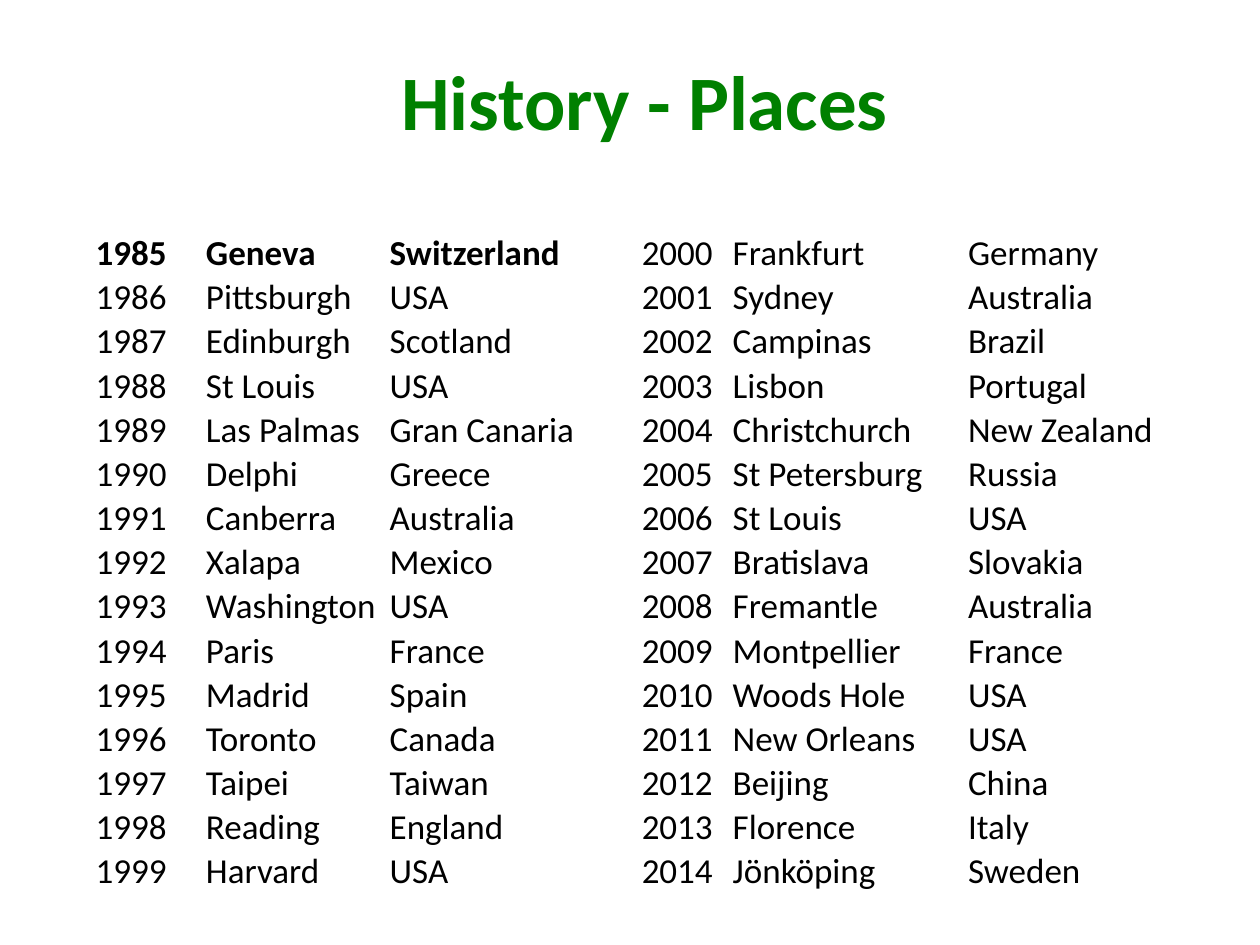
from lxml.etree import SubElement
from pptx import Presentation
from pptx.dml.color import RGBColor
from pptx.enum.text import MSO_ANCHOR as Anchor, PP_ALIGN as Align
from pptx.oxml.ns import qn
from pptx.util import Pt

GREEN = RGBColor(0x00, 0x80, 0x00)
BLACK = RGBColor(0x00, 0x00, 0x00)
WHITE = RGBColor(0xFF, 0xFF, 0xFF)

EARLY_PLACES = [
    ("1985", "Geneva", "Switzerland"),
    ("1986", "Pittsburgh", "USA"),
    ("1987", "Edinburgh", "Scotland"),
    ("1988", "St Louis", "USA"),
    ("1989", "Las Palmas", "Gran Canaria"),
    ("1990", "Delphi", "Greece"),
    ("1991", "Canberra", "Australia"),
    ("1992", "Xalapa", "Mexico"),
    ("1993", "Washington", "USA"),
    ("1994", "Paris", "France"),
    ("1995", "Madrid", "Spain"),
    ("1996", "Toronto", "Canada"),
    ("1997", "Taipei", "Taiwan"),
    ("1998", "Reading", "England"),
    ("1999", "Harvard", "USA"),
]
LATER_PLACES = [
    ("2000", "Frankfurt", "Germany"),
    ("2001", "Sydney", "Australia"),
    ("2002", "Campinas", "Brazil"),
    ("2003", "Lisbon", "Portugal"),
    ("2004", "Christchurch", "New Zealand"),
    ("2005", "St Petersburg", "Russia"),
    ("2006", "St Louis", "USA"),
    ("2007", "Bratislava", "Slovakia"),
    ("2008", "Fremantle", "Australia"),
    ("2009", "Montpellier", "France"),
    ("2010", "Woods Hole", "USA"),
    ("2011", "New Orleans", "USA"),
    ("2012", "Beijing", "China"),
    ("2013", "Florence", "Italy"),
    ("2014", "Jönköping", "Sweden"),
]


def write(frame, text, *, size, color=BLACK, bold=False, font="Calibri"):
    """Put one left-aligned, formatted paragraph into a text frame."""
    line = frame.paragraphs[0]
    line.alignment = Align.LEFT
    run = line.add_run()
    run.text = text
    run.font.name, run.font.size, run.font.bold = font, Pt(size), bold
    run.font.color.rgb = color


class PlacesSlide:
    """Hold the table style and the current slide."""

    row_height = 24.77
    inset = 0.72
    border = 1
    text_size = 20

    def __init__(self, deck):
        self.slide = deck.slides.add_slide(deck.slide_layouts[5])

    def title(self, text, left, top, width, height):
        heading = self.slide.shapes.title
        heading.left, heading.top = Pt(left), Pt(top)
        heading.width, heading.height = Pt(width), Pt(height)
        heading.text_frame.vertical_anchor = Anchor.MIDDLE
        write(heading.text_frame, text, size=44, color=GREEN, bold=True)

    def cell(self, cell, text, bold):
        cell.margin_left = cell.margin_right = cell.margin_top = Pt(self.inset)
        cell.margin_bottom = 0
        cell.vertical_anchor = Anchor.BOTTOM
        write(cell.text_frame, text, size=self.text_size, bold=bold)
        properties = cell._tc.get_or_add_tcPr()
        for side in ("lnL", "lnR", "lnT", "lnB"):
            edge = SubElement(properties, qn(f"a:{side}"), w=str(Pt(self.border)))
            paint = SubElement(edge, qn("a:solidFill"))
            SubElement(paint, qn("a:srgbClr"), val=str(WHITE))
        cell.fill.background()

    def table(self, places, left, top, widths, bold_years=()):
        places_table = self.slide.shapes.add_table(
            len(places), len(widths), Pt(left), Pt(top),
            Pt(sum(widths)), Pt(self.row_height * len(places))).table
        places_table.first_row = places_table.horz_banding = False
        for column, width in zip(places_table.columns, widths):
            column.width = Pt(width)
        for row, place in zip(places_table.rows, places):
            row.height = Pt(self.row_height)
            for cell, text in zip(row.cells, place):
                self.cell(cell, text, bold=place[0] in bold_years)


def main():
    """Build and save the slide."""
    deck = Presentation()
    deck.slide_width, deck.slide_height = Pt(720), Pt(540)
    history = PlacesSlide(deck)
    history.title("History - Places", 222, 12, 462, 90)
    history.table(EARLY_PLACES, 54, 132, (63, 105, 126), bold_years=("1985",))
    history.table(LATER_PLACES, 366, 132, (52, 134.5, 137.5))
    deck.save("out.pptx")


if __name__ == "__main__":
    main()
